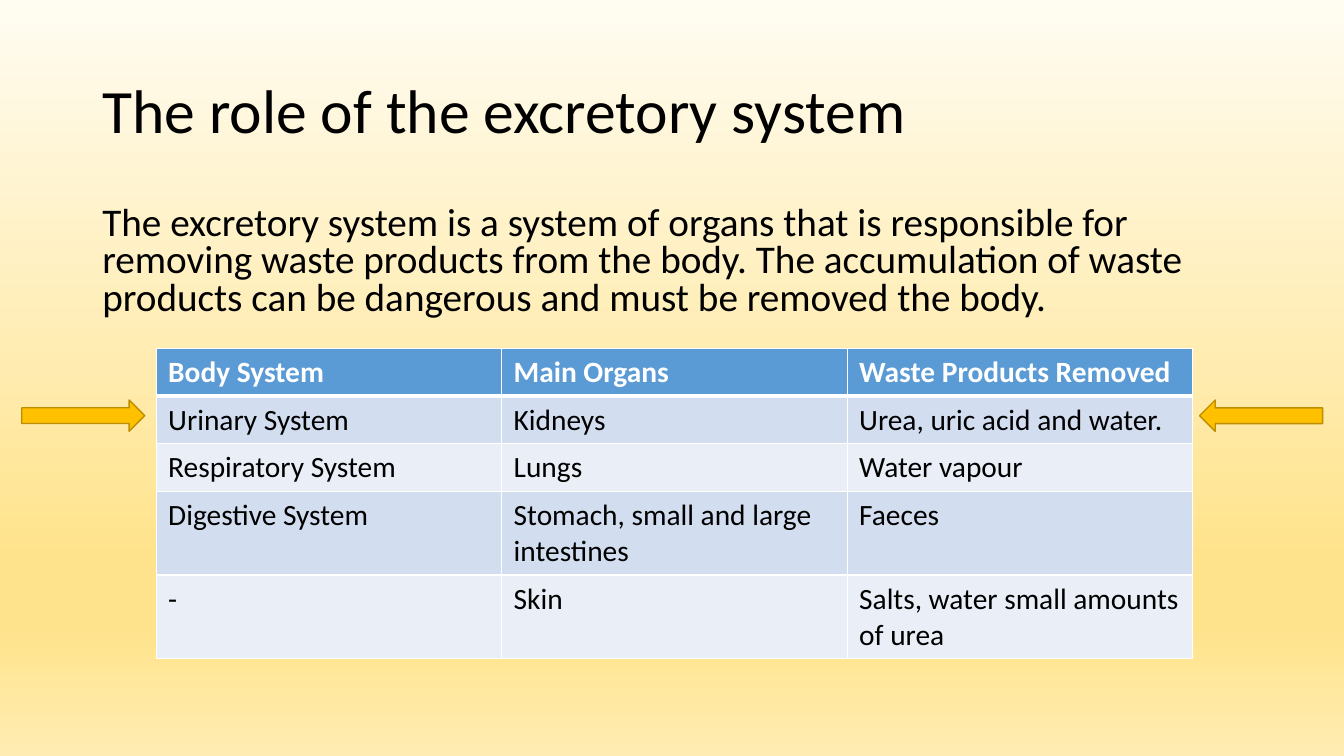
from lxml.etree import SubElement
from pptx import Presentation
from pptx.dml.color import RGBColor
from pptx.enum.shapes import MSO_SHAPE
from pptx.enum.text import MSO_ANCHOR
from pptx.oxml.ns import qn
from pptx.util import Cm, Pt

BLACK = RGBColor(0x00, 0x00, 0x00)
WHITE = RGBColor(0xFF, 0xFF, 0xFF)
BLUE = RGBColor(0x5B, 0x9B, 0xD5)
BAND = RGBColor(0xD2, 0xDE, 0xEF)
PALE = RGBColor(0xEA, 0xEF, 0xF7)
GOLD = RGBColor(0xFF, 0xC0, 0x00)
BROWN = RGBColor(0xBD, 0x8E, 0x00)
CREAM = RGBColor(0xFF, 0xFC, 0xF2)
YELLOW = RGBColor(0xFF, 0xE3, 0x8C)
SAND = RGBColor(0xFF, 0xEC, 0xB2)

STOPS = [(0, CREAM), (74, YELLOW), (83, YELLOW), (100, SAND)]
ROWS = [
    ["Body System", "Main Organs", "Waste Products Removed"],
    ["Urinary System", "Kidneys", "Urea, uric acid and water."],
    ["Respiratory System", "Lungs", "Water vapour"],
    ["Digestive System", "Stomach, small and large intestines", "Faeces"],
    ["-", "Skin", "Salts, water small amounts of urea"],
]
HEIGHTS = [1.2, 1.2, 1.2, 2.11, 2.11]


def add_color(parent, color):
    SubElement(parent, qn("a:srgbClr")).set("val", str(color))


class Page:
    font = "Calibri"

    def __init__(self, deck):
        self.slide = deck.slides.add_slide(deck.slide_layouts[5])
        self.shapes = self.slide.shapes

    def backdrop(self, stops):
        fill = self.slide.background.fill
        fill.gradient()
        fill.gradient_angle = 270
        group = next(self.slide.element.iter(qn("a:gsLst")))
        for old in list(group):
            group.remove(old)
        for place, color in stops:
            stop = SubElement(group, qn("a:gs"))
            stop.set("pos", str(place * 1000))
            add_color(stop, color)

    def style(self, frame, size, color=BLACK, bold=False, space=None):
        for part in frame.paragraphs:
            part.line_spacing = space
            for run in part.runs:
                run.font.name = self.font
                run.font.size = Pt(size)
                run.font.bold = bold
                run.font.color.rgb = color

    def title(self, text, left, top, width, height):
        shape = self.shapes.title
        shape.left, shape.top = Cm(left), Cm(top)
        shape.width, shape.height = Cm(width), Cm(height)
        frame = shape.text_frame
        frame.text = text
        frame.vertical_anchor = MSO_ANCHOR.MIDDLE
        self.style(frame, 44, space=0.9)
        frame.paragraphs[0].alignment = 1

    def text(self, text, left, top, width, height):
        box = self.shapes.add_textbox(Cm(left), Cm(top), Cm(width), Cm(height))
        frame = box.text_frame
        frame.word_wrap = True
        frame.text = text
        self.style(frame, 28, space=0.8)

    def border(self, cell, side, width):
        line = SubElement(cell._tc.get_or_add_tcPr(), qn(f"a:ln{side}"))
        line.set("w", str(Pt(width)))
        add_color(SubElement(line, qn("a:solidFill")), WHITE)

    def table(self, rows, heights, left, top, width):
        frame = self.shapes.add_table(
            len(rows), len(rows[0]), Cm(left), Cm(top), Cm(width), Cm(sum(heights)))
        table = frame.table
        for y, row in enumerate(rows):
            table.rows[y].height = Cm(heights[y])
            head = y == 0
            for x, text in enumerate(row):
                cell = table.cell(y, x)
                cell.text = text
                cell.margin_left = cell.margin_right = Cm(0.3)
                cell.margin_top = cell.margin_bottom = Cm(0.15)
                self.style(cell.text_frame, 21, WHITE if head else BLACK, head)
                for side in "LRTB":
                    thick = (y, side) in [(0, "B"), (1, "T")]
                    self.border(cell, side, 3 if thick else 1)
                cell.fill.solid()
                cell.fill.fore_color.rgb = BLUE if head else BAND if y % 2 else PALE

    def arrow(self, left, top, turn=0):
        shape = self.shapes.add_shape(
            MSO_SHAPE.RIGHT_ARROW, Cm(left), Cm(top), Cm(3.1), Cm(0.79))
        shape.rotation = turn
        shape.shadow.inherit = False
        shape.fill.solid()
        shape.fill.fore_color.rgb = GOLD
        shape.line.color.rgb = BROWN
        shape.line.width = Pt(1)


def main():
    deck = Presentation()
    deck.slide_width, deck.slide_height = Cm(33.87), Cm(19.05)
    page = Page(deck)
    page.backdrop(STOPS)
    page.title("The role of the excretory system", 2.33, 1.01, 29.21, 3.68)
    page.text(
        "The excretory system is a system of organs that is responsible for "
        "removing waste products from the body. The accumulation of waste "
        "products can be dangerous and must be removed the body.",
        2.33, 5.07, 28.67, 3.32)
    page.table(ROWS, HEIGHTS, 3.94, 8.78, 26.12)
    page.arrow(30.23, 10.08, 180)
    page.arrow(0.55, 10.08)
    deck.save("out.pptx")


if __name__ == "__main__":
    main()
